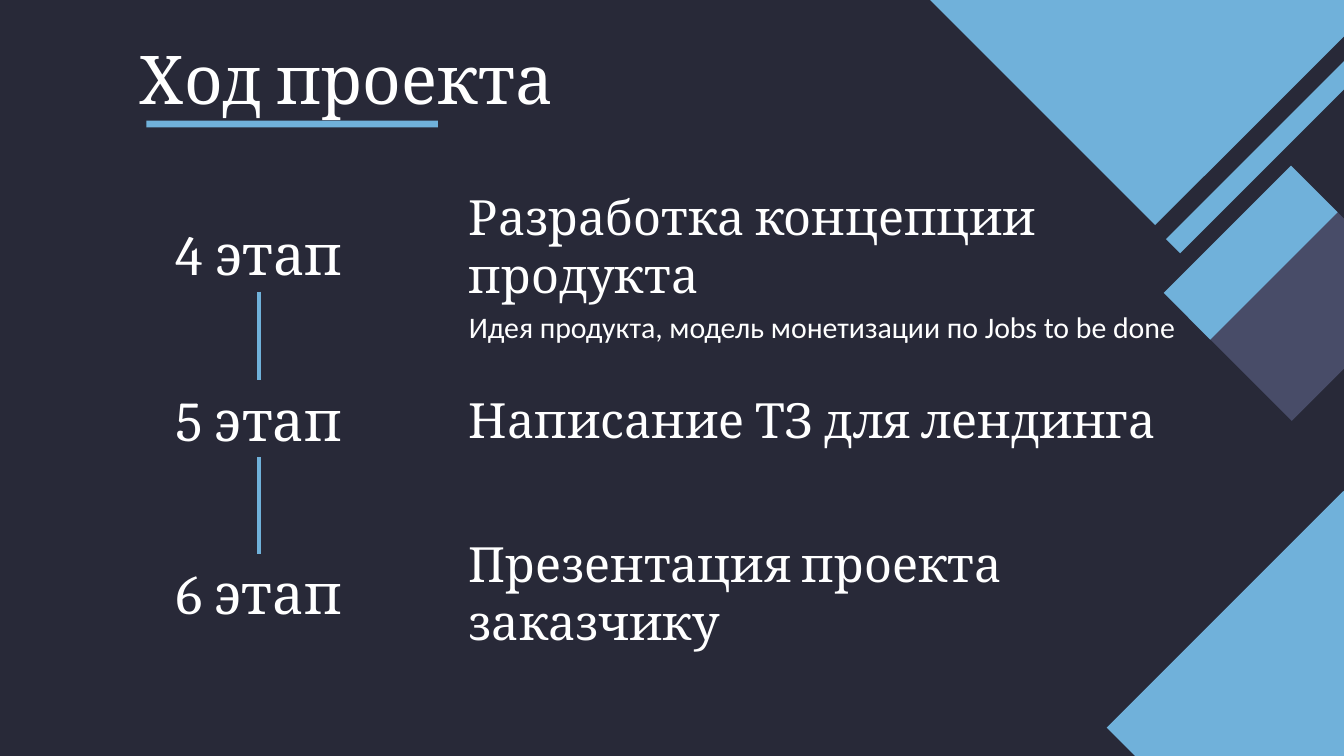
from dataclasses import dataclass
from itertools import pairwise

from lxml import etree
from pptx import Presentation
from pptx.dml.color import RGBColor
from pptx.enum.shapes import MSO_CONNECTOR, MSO_SHAPE
from pptx.enum.text import MSO_ANCHOR, MSO_AUTO_SIZE, PP_ALIGN
from pptx.oxml.ns import qn
from pptx.util import Pt

RECTANGLE = MSO_SHAPE.RECTANGLE
STRAIGHT = MSO_CONNECTOR.STRAIGHT
TOP, MIDDLE = MSO_ANCHOR.TOP, MSO_ANCHOR.MIDDLE
LEFT, CENTER = PP_ALIGN.LEFT, PP_ALIGN.CENTER
NO_AUTOFIT = MSO_AUTO_SIZE.NONE
TOP_SIDE, BOTTOM_SIDE = 0, 2


@dataclass(frozen=True)
class Theme:
    background: RGBColor = RGBColor(0x28, 0x29, 0x38)
    accent: RGBColor = RGBColor(0x70, 0xB1, 0xDA)
    muted: RGBColor = RGBColor(0x48, 0x4C, 0x68)
    text: RGBColor = RGBColor(0xFF, 0xFF, 0xFF)
    heading_font: str = "Cambria"
    body_font: str = "Calibri"
    title_size: int = 36
    stage_size: int = 30
    heading_size: int = 26
    detail_size: int = 16
    line_width: float = 2.25


THEME = Theme()
SLIDE_BOX = (0, 0, 720, 405)
TITLE_BOX = (31.7, 20.2, 607.7, 42.5)
STAGES_BOX = (72, 115.2, 606.2, 222.5)
# Offset of each label and heading from the top of the stages box
STAGES = [
    ("4 этап", 0, "Разработка концепции продукта", 1.4),
    ("5 этап", 88.6, "Написание ТЗ для лендинга", 94.3),
    ("6 этап", 181.4, "Презентация проекта заказчику", 187.2),
]
DETAIL = "Идея продукта, модель монетизации по Jobs to be done"


def add_block(slide, box, color, rotation=0):
    block = slide.shapes.add_shape(RECTANGLE, *map(Pt, box))
    block.shadow.inherit = False
    block.fill.solid()
    block.fill.fore_color.rgb = color
    block.line.fill.background()
    block.rotation = rotation


def write_text(shape, text, size, font=THEME.heading_font, anchor=MIDDLE, align=LEFT):
    frame = shape.text_frame
    frame_format = {
        "word_wrap": True,
        "auto_size": NO_AUTOFIT,
        "vertical_anchor": anchor,
        "margin_left": Pt(7.2),
        "margin_right": Pt(7.2),
        "margin_top": Pt(7.2),
        "margin_bottom": Pt(7.2),
    }
    for name, value in frame_format.items():
        setattr(frame, name, value)
    para = frame.paragraphs[0]
    para.alignment = align
    span = para.add_run()
    span.text = text
    for name, value in {"name": font, "size": Pt(size)}.items():
        setattr(span.font, name, value)
    span.font.color.rgb = THEME.text
    return para


def add_text(slide, box, *content, **text_format):
    shape = slide.shapes.add_textbox(*map(Pt, box))
    write_text(shape, *content, **text_format)
    return shape


def join_vertically(slide, upper, lower):
    link = slide.shapes.add_connector(STRAIGHT, 0, 0, 0, 0)
    link.begin_connect(upper, BOTTOM_SIDE)
    link.end_connect(lower, TOP_SIDE)
    link.line.color.rgb = THEME.accent
    link.line.width = Pt(THEME.line_width)
    properties = link._element.find(qn("p:spPr"))
    etree.SubElement(properties, qn("a:effectLst"))


def add_decoration(slide, box):
    """Place the diagonal blocks along the right edge of the box."""
    left, top, width, height = box
    right = left + width
    blocks = [
        (-51.1, 119.5, 67, 96.5, THEME.muted),
        (-67.7, 87.1, 35.3, 96.5, THEME.accent),
        (-190.8, -95.8, 179.3, 179.3, THEME.accent),
        (-90, 300.2, 179.3, 179.3, THEME.accent),
        (-41.8, -1.4, 10.8, 156.2, THEME.accent),
    ]
    for x, y, block_width, block_height, color in blocks:
        add_block(slide, (right + x, top + y, block_width, block_height), color, 45)


def add_title(slide, box):
    left, top, width, height = box
    title = slide.shapes.title
    for name, value in zip(("left", "top", "width", "height"), box):
        setattr(title, name, Pt(value))
    para = write_text(title, "Ход проекта", THEME.title_size)
    properties = para._p.get_or_add_pPr()
    properties.set("marL", "0")
    properties.set("indent", str(Pt(36)))
    add_block(slide, (left + 46.8, top + height + 2, 156.2, 3.6), THEME.accent)


def add_stages(slide, box):
    left, top, width, height = box
    text_left = left + 172.1
    labels = []
    for label, label_offset, heading, heading_offset in STAGES:
        label_box = (left, top + label_offset, 133.2, 41)
        labels.append(add_text(slide, label_box, label, THEME.stage_size, align=CENTER))
        heading_box = (text_left, top + heading_offset, 382.3, 29.5)
        add_text(slide, heading_box, heading, THEME.heading_size)
    for upper, lower in pairwise(labels):
        join_vertically(slide, upper, lower)
    detail_box = (text_left, top + 43.2, left + width - text_left, 33.8)
    add_text(slide, detail_box, DETAIL, THEME.detail_size, THEME.body_font, anchor=TOP)


def build_project_slide(deck, box):
    layout = deck.slide_layouts.get_by_name("Title Only")
    page = deck.slides.add_slide(layout)
    page.background.fill.solid()
    page.background.fill.fore_color.rgb = THEME.background
    add_decoration(page, box)
    add_title(page, TITLE_BOX)
    add_stages(page, STAGES_BOX)


def main():
    deck = Presentation()
    deck.slide_width, deck.slide_height = map(Pt, SLIDE_BOX[2:])
    build_project_slide(deck, SLIDE_BOX)
    deck.save("out.pptx")


if __name__ == "__main__":
    main()
